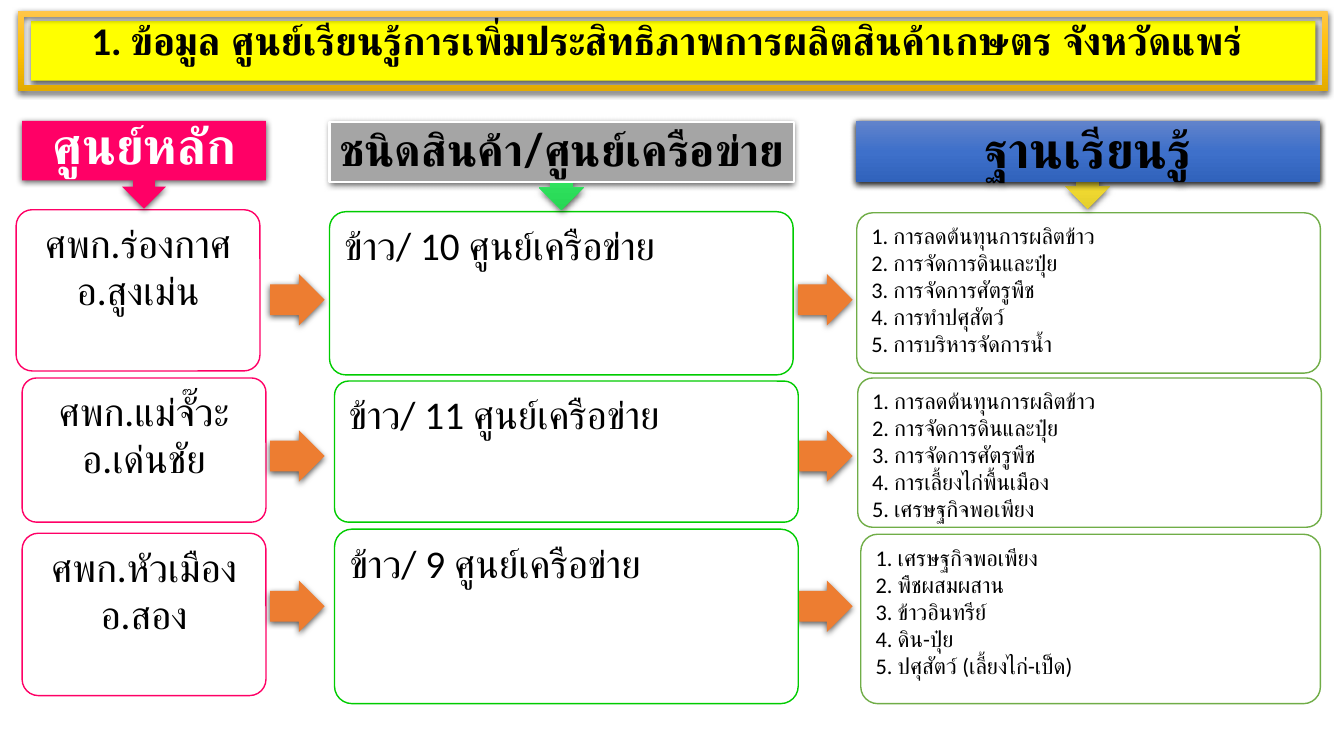
from collections import namedtuple
from copy import deepcopy
from dataclasses import dataclass

from lxml.etree import SubElement
from pptx import Presentation
from pptx.dml.color import RGBColor
from pptx.enum.shapes import MSO_SHAPE as Shape
from pptx.enum.text import MSO_ANCHOR as Anchor, MSO_AUTO_SIZE as AutoSize, PP_ALIGN as Align
from pptx.oxml.ns import qn
from pptx.util import Pt


@dataclass(frozen=True)
class Theme:
    body_font: str = "Calibri"
    header_font: str = "Lato"
    title_size: int = 28
    card_size: int = 28
    topic_size: int = 16
    black: str = "000000"
    white: str = "FFFFFF"
    yellow: str = "FFFF00"
    pink: str = "FF0066"
    green: str = "00CC00"
    olive: str = "70AD47"
    orange: str = "ED7D31"
    gray: str = "A5A5A5"
    gold_blend: tuple = ("FFC64B", "FFC000", "E3AB00")
    green_blend: tuple = ("5EE57B", "36E864", "27D755")
    yellow_blend: tuple = ("FAE65D", "FFE735", "E5CF2D")
    blue_blend: tuple = ("6183CB", "3E70CA", "3062BB")


THEME = Theme()
Row = namedtuple("Row", "center_box center network_box network topic_box topics arrow_top")
Header = namedtuple("Header", "callout_box callout_fill body label_box label size color fill line shadow")

ROWS = [
    Row((11.5, 149.8, 174.2, 115.2), ["ศพก.ร่องกาศ", "อ.สูงเม่น"],
        (235.4, 151.2, 331.2, 116.6), "ข้าว/ 10 ศูนย์เครือข่าย",
        (612, 152, 331.2, 114.5),
        ["การลดต้นทุนการผลิตข้าว", "การจัดการดินและปุ๋ย", "การจัดการศัตรูพืช",
         "การทำปศุสัตว์", "การบริหารจัดการน้ำ"], 195.8),
    Row((15.8, 270, 174.2, 103), ["ศพก.แม่จั๊วะ", "อ.เด่นชัย"],
        (239, 272.2, 331.2, 100.8), "ข้าว/ 11 ศูนย์เครือข่าย",
        (612.7, 270, 331.2, 106.6),
        ["การลดต้นทุนการผลิตข้าว", "การจัดการดินและปุ๋ย", "การจัดการศัตรูพืช",
         "การเลี้ยงไก่พื้นเมือง", "เศรษฐกิจพอเพียง"], 307.4),
    Row((15.8, 380.9, 174.2, 116), ["ศพก.หัวเมือง", "อ.สอง"],
        (239, 378, 331.2, 124.6), "ข้าว/ 9 ศูนย์เครือข่าย",
        (614.9, 381.6, 328.3, 121),
        ["เศรษฐกิจพอเพียง", "พืชผสมผสาน", "ข้าวอินทรีย์",
         "ดิน-ปุ๋ย", "ปศุสัตว์ (เลี้ยงไก่-เป็ด)"], 414.7),
]

HEADERS = [
    Header((15.8, 86.4, 174.2, 62.6), THEME.pink, 0.68, (18.7, 85.7, 168.5, 41),
           "ศูนย์หลัก", 36, THEME.white, None, None, False),
    Header((235.4, 86.4, 331.2, 63.4), THEME.green_blend, 0.69, (235.4, 87.1, 331.9, 43.2),
           "ชนิดสินค้า/ศูนย์เครือข่าย", 32, THEME.black, THEME.gray, THEME.white, False),
    Header((611.3, 86.4, 331.2, 62.6), THEME.yellow_blend, 0.69, (611.3, 86.4, 331.9, 43.9),
           "ฐานเรียนรู้", 36, THEME.black, THEME.blue_blend, None, True),
]


def rgb(color):
    return RGBColor.from_string(color)


def paint(shape, fill):
    """Fill with one colour, or blend a tuple of colours from top to bottom."""
    if isinstance(fill, str):
        shape.fill.solid()
        shape.fill.fore_color.rgb = rgb(fill)
        return
    shape.fill.gradient()
    shape.fill.gradient_angle = 270
    stop_list = next(shape._element.iter(qn("a:gsLst")))
    while len(stop_list) < len(fill):
        stop_list.append(deepcopy(stop_list[0]))
    for index, (stop, color) in enumerate(zip(shape.fill.gradient_stops, fill)):
        stop.color.rgb = rgb(color)
        stop.position = index / (len(fill) - 1)


def cast_shadow(shape):
    effects = next(shape._element.iter(qn("a:effectLst")))
    outer = SubElement(effects, qn("a:outerShdw"), blurRad=str(Pt(4.5)),
                       dist=str(Pt(1.5)), dir="5400000", algn="ctr", rotWithShape="0")
    color = SubElement(outer, qn("a:srgbClr"), val=THEME.black)
    SubElement(color, qn("a:alpha"), val="63000")


def add_block(slide, kind, box, fill, line=None, width=1, adjustments=(), shadow=False):
    shape = slide.shapes.add_shape(kind, *map(Pt, box))
    for index, value in enumerate(adjustments):
        shape.adjustments[index] = value
    paint(shape, fill)
    if line:
        shape.line.color.rgb = rgb(line)
        shape.line.width = Pt(width)
    else:
        shape.line.fill.background()
    shape.shadow.inherit = False
    if shadow:
        cast_shadow(shape)
    return shape


def add_textbox(slide, box):
    return slide.shapes.add_textbox(*map(Pt, box))


def write(shape, lines, size, color=THEME.black, font=THEME.body_font,
          bold=False, align=Align.CENTER, anchor=Anchor.TOP):
    frame = shape.text_frame
    frame.word_wrap = True
    frame.vertical_anchor = anchor
    frame.text = "\n".join(lines)
    for paragraph in frame.paragraphs:
        paragraph.alignment = align
        for run in paragraph.runs:
            run.font.name = font
            run.font.size = Pt(size)
            run.font.bold = bold
            run.font.color.rgb = rgb(color)
    return frame


def add_card(slide, box, line, lines, size, align=Align.LEFT):
    card = add_block(slide, Shape.ROUNDED_RECTANGLE, box, THEME.white, line, adjustments=[0.1])
    write(card, lines, size, align=align)


def add_arrow(slide, left, top):
    add_block(slide, Shape.RIGHT_ARROW, (left, top, 38.9, 36.7), THEME.orange,
              adjustments=[0.6, 0.5], shadow=True)


def add_row(slide, row):
    add_card(slide, row.center_box, THEME.pink, row.center, THEME.card_size, Align.CENTER)
    for left in (193, 570.2):
        add_arrow(slide, left, row.arrow_top)
    add_card(slide, row.network_box, THEME.green, [row.network], THEME.card_size)
    topics = [f"{number}. {topic}" for number, topic in enumerate(row.topics, 1)]
    add_card(slide, row.topic_box, THEME.olive, topics, THEME.topic_size)


def add_header(slide, header):
    add_block(slide, Shape.DOWN_ARROW_CALLOUT, header.callout_box, header.callout_fill,
              adjustments=[0.25, 0.25, 0.25, header.body], shadow=True)
    if header.fill:
        label = add_block(slide, Shape.RECTANGLE, header.label_box, header.fill,
                          header.line, 1.5, shadow=header.shadow)
    else:
        label = add_textbox(slide, header.label_box)
    frame = write(label, [header.label], header.size, header.color, THEME.header_font,
                  bold=True, anchor=Anchor.MIDDLE)
    frame.margin_left = frame.margin_right = frame.margin_top = frame.margin_bottom = Pt(6.5)
    frame.paragraphs[0].line_spacing = 0.9
    frame.paragraphs[0].space_after = Pt(header.size * 0.35)


def add_title(slide, text):
    title = add_textbox(slide, (56.9, 7.9, 838.8, 41))
    frame = write(title, [text], THEME.title_size, bold=True)
    frame.auto_size = AutoSize.SHAPE_TO_FIT_TEXT


def main():
    presentation = Presentation()
    presentation.slide_width, presentation.slide_height = Pt(960), Pt(540)
    slide = presentation.slides.add_slide(presentation.slide_layouts[6])

    # Title banner
    add_block(slide, Shape.RECTANGLE, (22.3, 15.1, 917.3, 42.5), THEME.yellow, shadow=True)
    add_block(slide, Shape.FRAME, (13, 7.9, 935.3, 56.9), THEME.gold_blend,
              adjustments=[0.07], shadow=True)
    add_title(slide, "1. ข้อมูล ศูนย์เรียนรู้การเพิ่มประสิทธิภาพการผลิตสินค้าเกษตร จังหวัดแพร่")

    # Learning centres, their networks and topics
    for row in ROWS:
        add_row(slide, row)

    # Column headers
    for header in HEADERS:
        add_header(slide, header)

    presentation.save("out.pptx")


if __name__ == "__main__":
    main()
